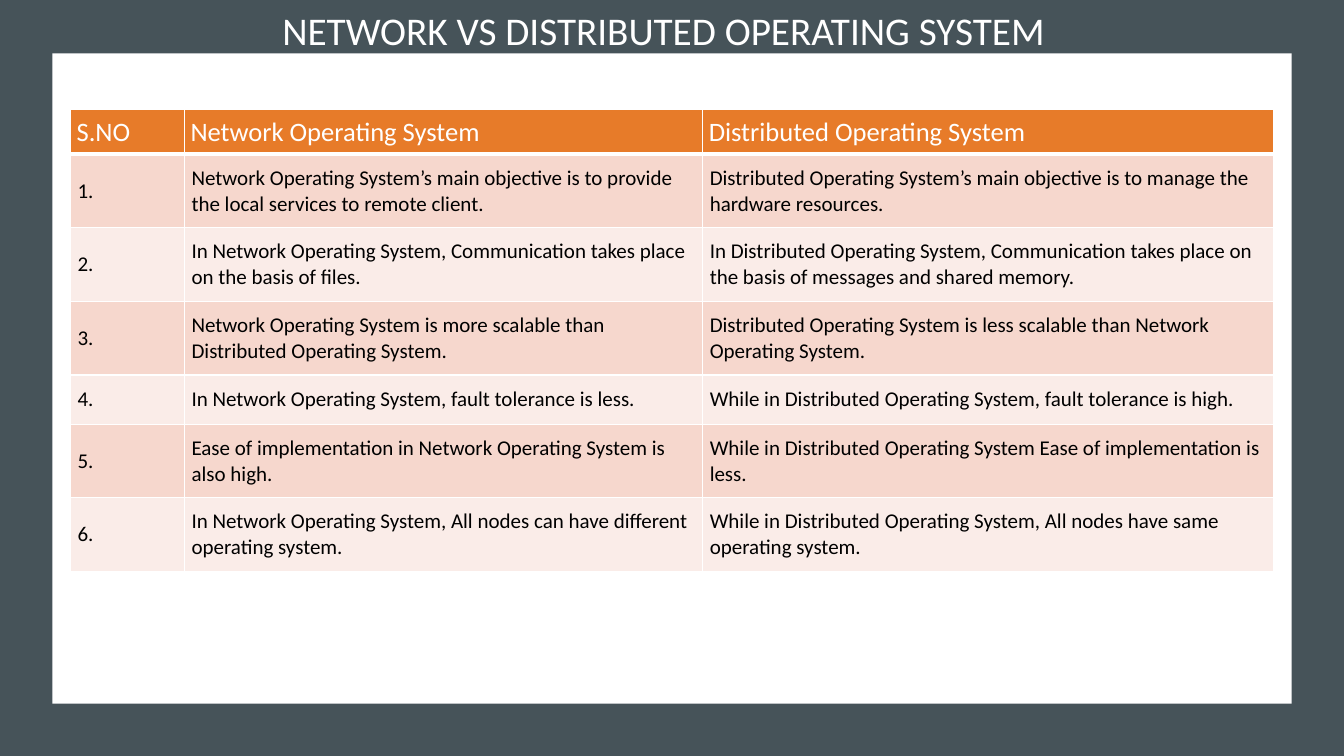
from dataclasses import dataclass

from lxml.etree import SubElement
from pptx import Presentation
from pptx.dml.color import RGBColor as RGB
from pptx.enum.shapes import MSO_SHAPE as Shape
from pptx.enum.text import MSO_ANCHOR as Anchor, MSO_AUTO_SIZE as Fit, PP_ALIGN as Align
from pptx.oxml.ns import qn
from pptx.slide import Slide
from pptx.table import _Cell as Cell
from pptx.text.text import _Paragraph as Para
from pptx.util import Pt

SCALE = 9144  # EMU in one px, 100 px to the inch


@dataclass(frozen=True)
class Theme:
    font: str = "Calibri"
    dark: str = "465359"
    white: str = "FFFFFF"
    black: str = "000000"
    head: str = "E77B29"
    bands: tuple[str, str] = ("F6D7CD", "FAECE8")
    title_size: int = 28
    head_size: int = 19
    body_size: int = 15


@dataclass(frozen=True)
class Box:
    left: int
    top: int
    width: int
    height: int

    def emu(self) -> tuple[int, ...]:
        return tuple(px(n) for n in (self.left, self.top, self.width, self.height))


@dataclass(frozen=True)
class Look:
    """Fill, text and padding of one kind of table row."""
    fill: str
    color: str
    size: int
    pad_x: int
    pad_y: int
    rule: int


@dataclass(frozen=True)
class Pair:
    network: str
    shared: str
    height: int = 73


THEME = Theme()
PAGE = Box(0, 0, 1333, 750)
PANEL = Box(52, 53, 1229, 645)
TITLE = Box(278, 4, 898, 49)
GRID = Box(70, 109, 1193, 458)
COLS = (113, 514, 566)
HEAD_HIGH = 44
HEAD = Look(THEME.head, THEME.white, THEME.head_size, 6, 3, 3)
BANDS = [Look(fill, THEME.black, THEME.body_size, 7, 9, 1) for fill in THEME.bands]

PAIRS = (
    Pair("Network Operating System’s main objective is to provide the local services to remote client.",
         "Distributed Operating System’s main objective is to manage the hardware resources."),
    Pair("In Network Operating System, Communication takes place on the basis of files.",
         "In Distributed Operating System, Communication takes place on the basis of messages and shared memory."),
    Pair("Network Operating System is more scalable than Distributed Operating System.",
         "Distributed Operating System is less scalable than Network Operating System."),
    Pair("In Network Operating System, fault tolerance is less.",
         "While in Distributed Operating System, fault tolerance is high.", 49),
    Pair("Ease of implementation in Network Operating System is also high.",
         "While in Distributed Operating System Ease of implementation is less."),
    Pair("In Network Operating System, All nodes can have different operating system.",
         "While in Distributed Operating System, All nodes have same operating system."),
)


def px(count: int) -> int:
    return count * SCALE


def style(para: Para, size: int, color: str) -> None:
    for run in para.runs:
        run.font.name = THEME.font
        run.font.size = Pt(size)
        run.font.bold = False
        run.font.color.rgb = RGB.from_string(color)


def add_rect(slide: Slide, box: Box, color: str) -> None:
    rect = slide.shapes.add_shape(Shape.RECTANGLE, *box.emu())
    rect.shadow.inherit = False
    rect.fill.solid()
    rect.fill.fore_color.rgb = RGB.from_string(color)
    rect.line.fill.background()


def add_title(slide: Slide) -> None:
    title = slide.shapes.title
    title.left, title.top, title.width, title.height = TITLE.emu()
    frame = title.text_frame
    frame.text = "NETWORK VS DISTRIBUTED OPERATING SYSTEM"
    frame.auto_size = Fit.SHAPE_TO_FIT_TEXT
    frame.word_wrap = True
    frame.vertical_anchor = Anchor.BOTTOM
    frame.margin_left = frame.margin_right = frame.margin_bottom = 0
    frame.margin_top = px(2)
    para = frame.paragraphs[0]
    para.alignment = Align.LEFT
    para.space_before = Pt(1.3)
    para._p.get_or_add_pPr().set("marL", str(px(2)))
    style(para, THEME.title_size, THEME.white)
    # Bring the title in front of the panels
    slide.shapes._spTree.append(title._element)


def add_edges(cell: Cell, rule: int, above: int) -> None:
    props = cell._tc.get_or_add_tcPr()
    for side, width in (("L", 1), ("R", 1), ("T", above), ("B", rule)):
        line = SubElement(props, qn(f"a:ln{side}"), w=str(Pt(width)))
        fill = SubElement(line, qn("a:solidFill"))
        SubElement(fill, qn("a:srgbClr"), val=THEME.white)


def fill_cell(cell: Cell, text: str, look: Look, above: int) -> None:
    cell.text = text
    cell.vertical_anchor = Anchor.MIDDLE
    cell.margin_left = cell.margin_right = px(look.pad_x)
    cell.margin_top = cell.margin_bottom = px(look.pad_y)
    add_edges(cell, look.rule, above)
    cell.fill.solid()
    cell.fill.fore_color.rgb = RGB.from_string(look.fill)
    style(cell.text_frame.paragraphs[0], look.size, look.color)


def add_grid(slide: Slide) -> None:
    rows = [(HEAD, HEAD_HIGH, ("S.NO", "Network Operating System", "Distributed Operating System"))]
    for i, pair in enumerate(PAIRS):
        rows.append((BANDS[i % 2], pair.height, (f"{i + 1}.", pair.network, pair.shared)))
    table = slide.shapes.add_table(len(rows), len(COLS), *GRID.emu()).table
    for col, width in zip(table.columns, COLS):
        col.width = px(width)
    above = 1
    for row, (look, height, texts) in zip(table.rows, rows):
        row.height = px(height)
        for cell, text in zip(row.cells, texts):
            fill_cell(cell, text, look, above)
        above = look.rule


def main() -> None:
    deck = Presentation()
    deck.slide_width, deck.slide_height = px(PAGE.width), px(PAGE.height)
    slide = deck.slides.add_slide(deck.slide_layouts[5])
    add_rect(slide, PAGE, THEME.dark)
    add_rect(slide, PANEL, THEME.white)
    add_grid(slide)
    add_title(slide)
    deck.save("out.pptx")


if __name__ == "__main__":
    main()
